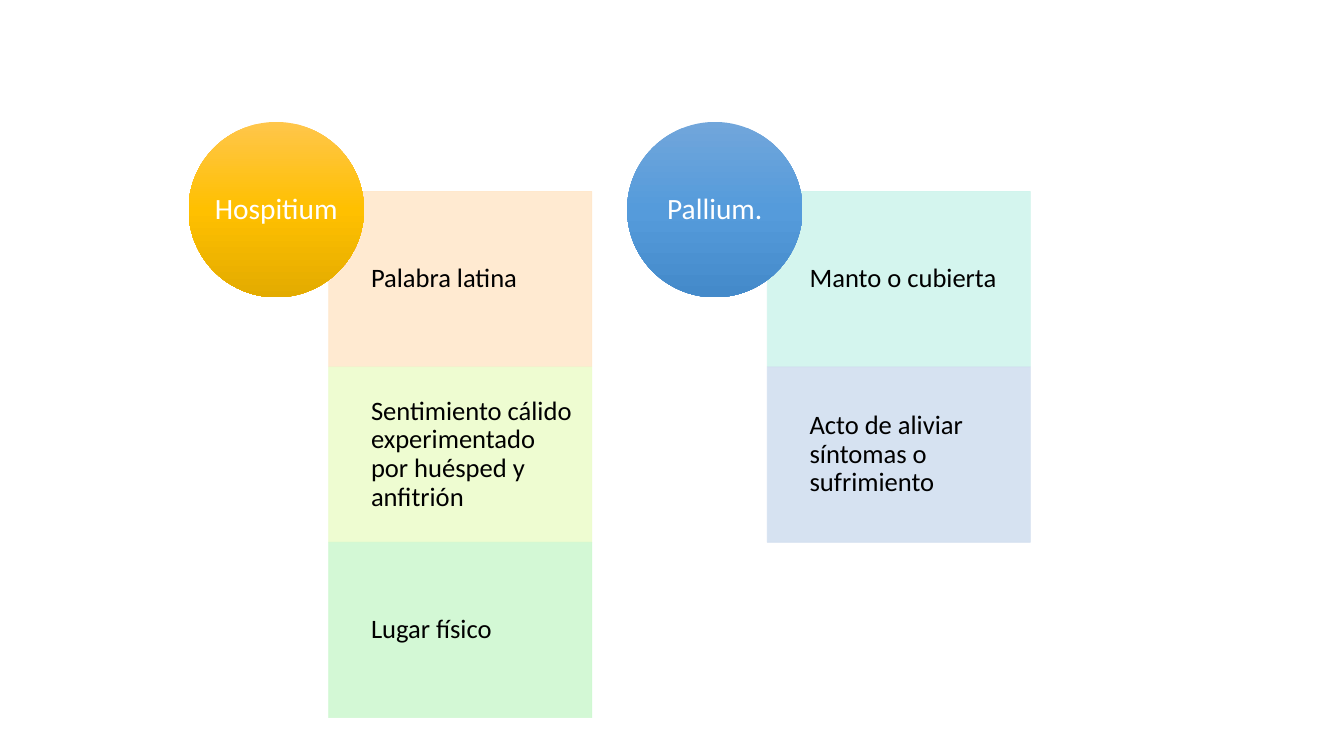
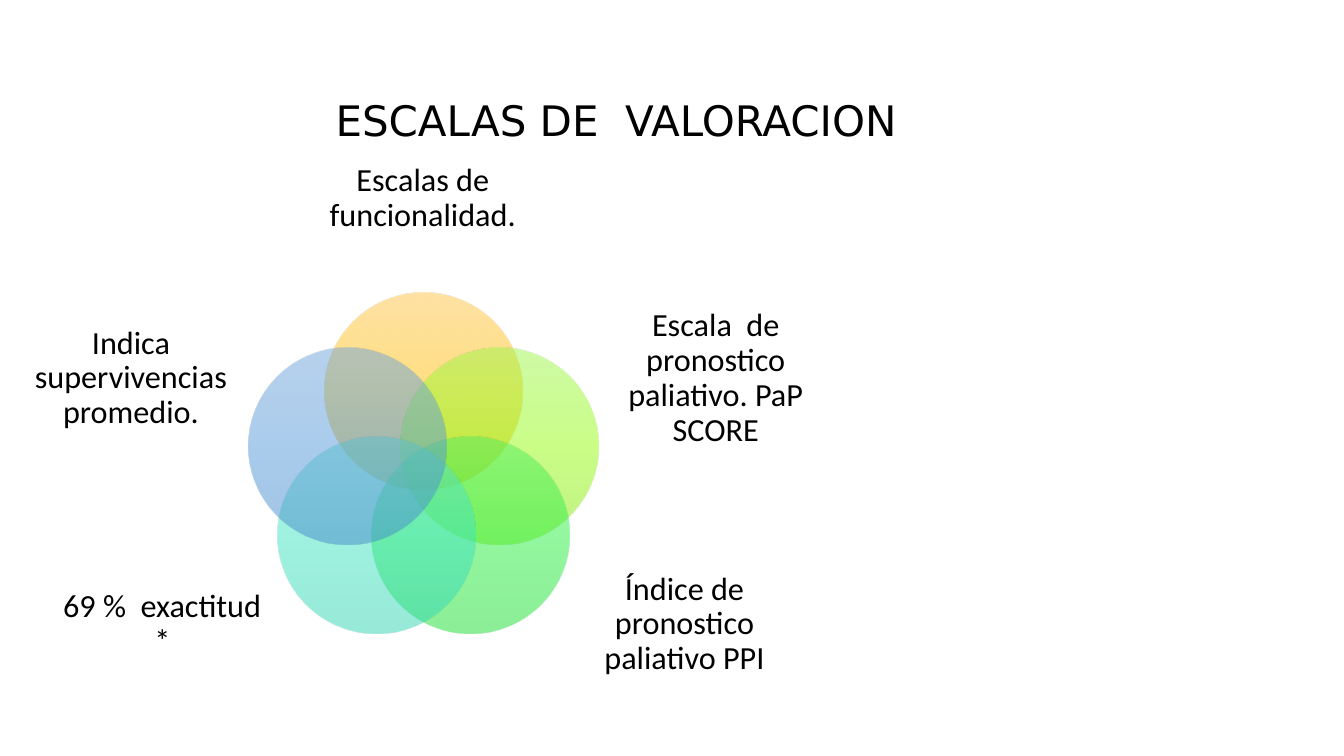
import math

from lxml import etree
from pptx import Presentation
from pptx.dml.color import RGBColor
from pptx.enum import shapes, text
from pptx.oxml.ns import qn
from pptx.util import Inches, Pt

# Shared style
FONT, HEAD = "Calibri", "DejaVu Sans"
HUES = {
    "black": "000000", "white": "FFFFFF",
    "peach": "FFE8CC", "lime": "EDFCCD", "mint": "CFF8D1",
    "aqua": "D0F4ED", "sky": "D2DFF0",
}
FADES = {
    "gold": ("FFC64B", "FFC000", "E3AB00"),
    "lime": ("A0F74E", "96FE0E", "85E509"),
    "green": ("56EC62", "27F13E", "18E02F"),
    "teal": ("63E3C6", "3FE5C3", "2FD4B2"),
    "blue": ("71A6DB", "559BDB", "448ACA"),
}

# Content: word, circle fade, (meaning, tile colour)
TERMS = [
    ("Hospitium", "gold", [
        ("Palabra latina", "peach"),
        ("Sentimiento cálido experimentado por huésped y anfitrión", "lime"),
        ("Lugar físico", "mint"),
    ]),
    ("Pallium.", "blue", [
        ("Manto o cubierta", "aqua"),
        ("Acto de aliviar síntomas o sufrimiento", "sky"),
    ]),
]
TITLE = "ESCALAS DE  VALORACION"
# Clockwise from the top: label, fade, label box
SCALES = [
    ("Escalas de funcionalidad.", "gold", (3.06, 1.31, 2.27, 1.32)),
    ("Escala  de pronostico paliativo. PaP SCORE", "lime",
     (6.08, 3.04, 2.04, 1.43)),
    ("Índice de pronostico paliativo PPI", "green", (5.77, 5.48, 2.04, 1.43)),
    ("69 %  exactitud *", "teal", (0.59, 5.48, 2.04, 1.43)),
    ("Indica supervivencias promedio.", "blue", (0.28, 3.04, 2.04, 1.43)),
]


def write(shape, words, size, hue="black", font=FONT, center=True,
          pads=(0, 0, 0, 0), wrap=True):
    frame = shape.text_frame
    frame.word_wrap = wrap
    frame.vertical_anchor = text.MSO_ANCHOR.MIDDLE
    (frame.margin_left, frame.margin_top,
     frame.margin_right, frame.margin_bottom) = map(Inches, pads)
    para = frame.paragraphs[0]
    para.alignment = text.PP_ALIGN.CENTER if center else text.PP_ALIGN.LEFT
    para.line_spacing = 0.9
    run = para.add_run()
    run.text = words
    run.font.name, run.font.size = font, Pt(size)
    run.font.color.rgb = RGBColor.from_string(HUES[hue])


def label(slide, box, words, size, **style):
    write(slide.shapes.add_textbox(*map(Inches, box)), words, size, **style)


def alpha(node, share):
    etree.SubElement(node, qn("a:alpha")).set("val", str(share * 1000))


def tile(slide, box, hue):
    shape = slide.shapes.add_shape(
        shapes.MSO_SHAPE.RECTANGLE, *map(Inches, box))
    shape.shadow.inherit = False
    shape.line.width = Pt(0.5)
    shape.fill.solid()
    for color in (shape.fill.fore_color, shape.line.color):
        color.rgb = RGBColor.from_string(HUES[hue])
    for node in list(shape.element.spPr.iter(qn("a:srgbClr"))):
        alpha(node, 90)
    return shape


def disc(slide, left, top, side, fade, share=100):
    shape = slide.shapes.add_shape(
        shapes.MSO_SHAPE.OVAL, *map(Inches, (left, top, side, side)))
    shape.shadow.inherit = False
    shape.line.fill.background()
    shape.fill.gradient()
    shape.fill.gradient_angle = 270
    stops = next(shape.element.spPr.iter(qn("a:gsLst")))
    for old in list(stops):
        stops.remove(old)
    for place, hue in zip((0, 50, 100), FADES[fade]):
        stop = etree.SubElement(stops, qn("a:gs"))
        stop.set("pos", str(place * 1000))
        color = etree.SubElement(stop, qn("a:srgbClr"))
        color.set("val", hue)
        if share < 100:
            alpha(color, share)
    return shape


def terms(slide):
    side, wide, step = 1.74, 2.61, 4.35
    for col, (word, fade, notes) in enumerate(TERMS):
        left = 1.87 + col * step
        for row, (note, hue) in enumerate(notes):
            box = (left + 1.39, 1.9 + row * side, wide, side)
            write(tile(slide, box, hue), note, 19, center=False,
                  pads=(0.42, 0.15, 0.15, 0.15))
        write(disc(slide, left, 1.21, side, fade), word, 21, hue="white",
              wrap=False)


def scales(slide):
    label(slide, (3.23, 0.49, 8.47, 1.45), TITLE, 30, font=HEAD,
          center=False, pads=(0.1, 0.05, 0.1, 0.05))
    # Circles sit on the corners of a regular polygon
    mid_x, mid_y, reach, side = 4.2, 4.67, 0.79, 1.96
    for spot, (words, fade, box) in enumerate(SCALES):
        turn = math.tau * spot / len(SCALES)
        disc(slide, mid_x + reach * math.sin(turn) - side / 2,
             mid_y - reach * math.cos(turn) - side / 2, side, fade, 50)
        label(slide, box, words, 23)


def main():
    deck = Presentation()
    deck.slide_width, deck.slide_height = Inches(13.33), Inches(7.5)
    for build in (terms, scales):
        build(deck.slides.add_slide(deck.slide_layouts[6]))
    deck.save("out.pptx")


if __name__ == "__main__":
    main()
